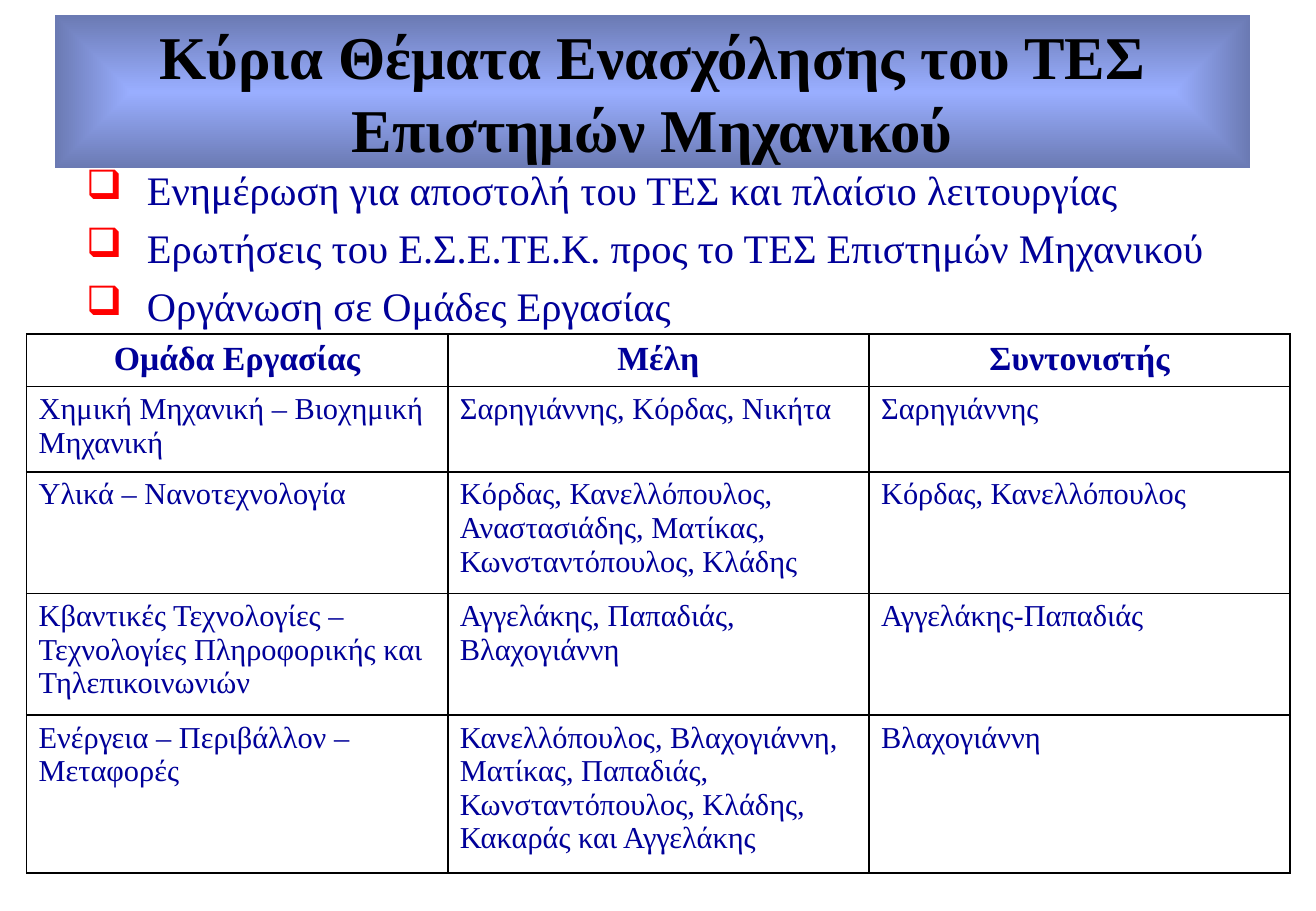
from lxml.etree import SubElement
from pptx import Presentation
from pptx.dml.color import RGBColor
from pptx.enum.shapes import MSO_SHAPE
from pptx.enum.text import MSO_ANCHOR, PP_ALIGN
from pptx.oxml import parse_xml
from pptx.oxml.ns import nsdecls, qn
from pptx.util import Pt

FONT = "Times New Roman"
BLACK, NAVY, RED = "000000", "000099", "FF0000"

TITLE = "Κύρια Θέματα Ενασχόλησης του ΤΕΣ Επιστημών Μηχανικού"
TOPICS = [
    "Ενημέρωση για αποστολή του ΤΕΣ και πλαίσιο λειτουργίας",
    "Ερωτήσεις του Ε.Σ.Ε.ΤΕ.Κ. προς το ΤΕΣ Επιστημών Μηχανικού",
    "Οργάνωση σε Ομάδες Εργασίας",
]
# Row height in points, then the cells
GROUPS = [
    (29.6, ["Ομάδα Εργασίας", "Μέλη", "Συντονιστής"]),
    (47, ["Χημική Μηχανική – Βιοχημική Μηχανική",
          "Σαρηγιάννης, Κόρδας, Νικήτα", "Σαρηγιάννης"]),
    (67, ["Υλικά – Νανοτεχνολογία",
          "Κόρδας, Κανελλόπουλος, Αναστασιάδης, Ματίκας, "
          "Κωνσταντόπουλος, Κλάδης", "Κόρδας, Κανελλόπουλος"]),
    (67, ["Κβαντικές Τεχνολογίες – Τεχνολογίες Πληροφορικής και Τηλεπικοινωνιών",
          "Αγγελάκης, Παπαδιάς, Βλαχογιάννη", "Αγγελάκης-Παπαδιάς"]),
    (87, ["Ενέργεια – Περιβάλλον – Μεταφορές",
          "Κανελλόπουλος, Βλαχογιάννη, Ματίκας, Παπαδιάς, "
          "Κωνσταντόπουλος, Κλάδης, Κακαράς και Αγγελάκης", "Βλαχογιάννη"]),
]


def color(value):
    return RGBColor.from_string(value)


def add_run(paragraph, text, size, ink, bold=False):
    run = paragraph.add_run()
    run.text = text
    run.font.name = FONT
    run.font.size = Pt(size)
    run.font.bold = bold
    run.font.color.rgb = color(ink)


def add_title(slide, left, top, width, height):
    shape = slide.shapes.add_shape(
        MSO_SHAPE.RECTANGLE, Pt(left), Pt(top), Pt(width), Pt(height))
    shape.shadow.inherit = False
    shape.line.fill.background()

    # Gradient from a light centre to darker edges
    shape.fill.gradient()
    for stop, position, shade in zip(
            shape.fill.gradient_stops, (0, 1), ("99AEFF", "6B7AB3")):
        stop.position = position
        stop.color.rgb = color(shade)
    gradient = shape._element.spPr.find(qn("a:gradFill"))
    gradient.remove(gradient.find(qn("a:lin")))
    center = SubElement(gradient, qn("a:path"), path="shape")
    SubElement(center, qn("a:fillToRect"), l="50000", t="50000", r="50000", b="50000")

    frame = shape.text_frame
    frame.word_wrap = True
    frame.vertical_anchor = MSO_ANCHOR.MIDDLE
    paragraph = frame.paragraphs[0]
    paragraph.alignment = PP_ALIGN.CENTER
    add_run(paragraph, TITLE, 36, BLACK, bold=True)


def add_bullet(paragraph, indent):
    properties = paragraph._p.get_or_add_pPr()
    properties.set("marL", str(Pt(indent)))
    properties.set("indent", str(-Pt(indent)))
    bullet_color = SubElement(properties, qn("a:buClr"))
    SubElement(bullet_color, qn("a:srgbClr"), val=RED)
    SubElement(properties, qn("a:buChar"), char="❑")


def add_topics(slide, left, top, width, height):
    frame = slide.shapes.add_textbox(
        Pt(left), Pt(top), Pt(width), Pt(height)).text_frame
    frame.word_wrap = True
    for index, topic in enumerate(TOPICS):
        paragraph = frame.add_paragraph() if index else frame.paragraphs[0]
        add_bullet(paragraph, 36)
        if index:
            paragraph.space_before = Pt(5.5)
        add_run(paragraph, topic, 24, NAVY)


def add_borders(cell):
    properties = cell._tc.get_or_add_tcPr()
    for index, side in enumerate(("lnL", "lnR", "lnT", "lnB")):
        properties.insert(index, parse_xml(
            f'<a:{side} {nsdecls("a")} w="{Pt(1)}"><a:solidFill>'
            f'<a:srgbClr val="{BLACK}"/></a:solidFill></a:{side}>'))


def add_groups_table(slide, left, top, width):
    height = sum(row_height for row_height, _ in GROUPS)
    columns = len(GROUPS[0][1])
    table = slide.shapes.add_table(
        len(GROUPS), columns, Pt(left), Pt(top), Pt(width), Pt(height)).table
    table.horz_banding = False
    for column in table.columns:
        column.width = Pt(width / columns)
    for row_index, (row_height, texts) in enumerate(GROUPS):
        table.rows[row_index].height = Pt(row_height)
        header = row_index == 0
        for column_index, text in enumerate(texts):
            cell = table.cell(row_index, column_index)
            cell.fill.background()
            add_borders(cell)
            paragraph = cell.text_frame.paragraphs[0]
            paragraph.alignment = PP_ALIGN.CENTER if header else PP_ALIGN.LEFT
            add_run(paragraph, text, 20 if header else 18, NAVY, bold=header)


def main():
    presentation = Presentation()
    presentation.slide_width = Pt(780)
    presentation.slide_height = Pt(540)
    slide = presentation.slides.add_slide(presentation.slide_layouts[6])
    add_topics(slide, 44, 94.5, 708.5, 445.5)
    add_title(slide, 32.5, 9, 708.5, 90.5)
    add_groups_table(slide, 15.75, 198, 749)
    presentation.save("out.pptx")


if __name__ == "__main__":
    main()
